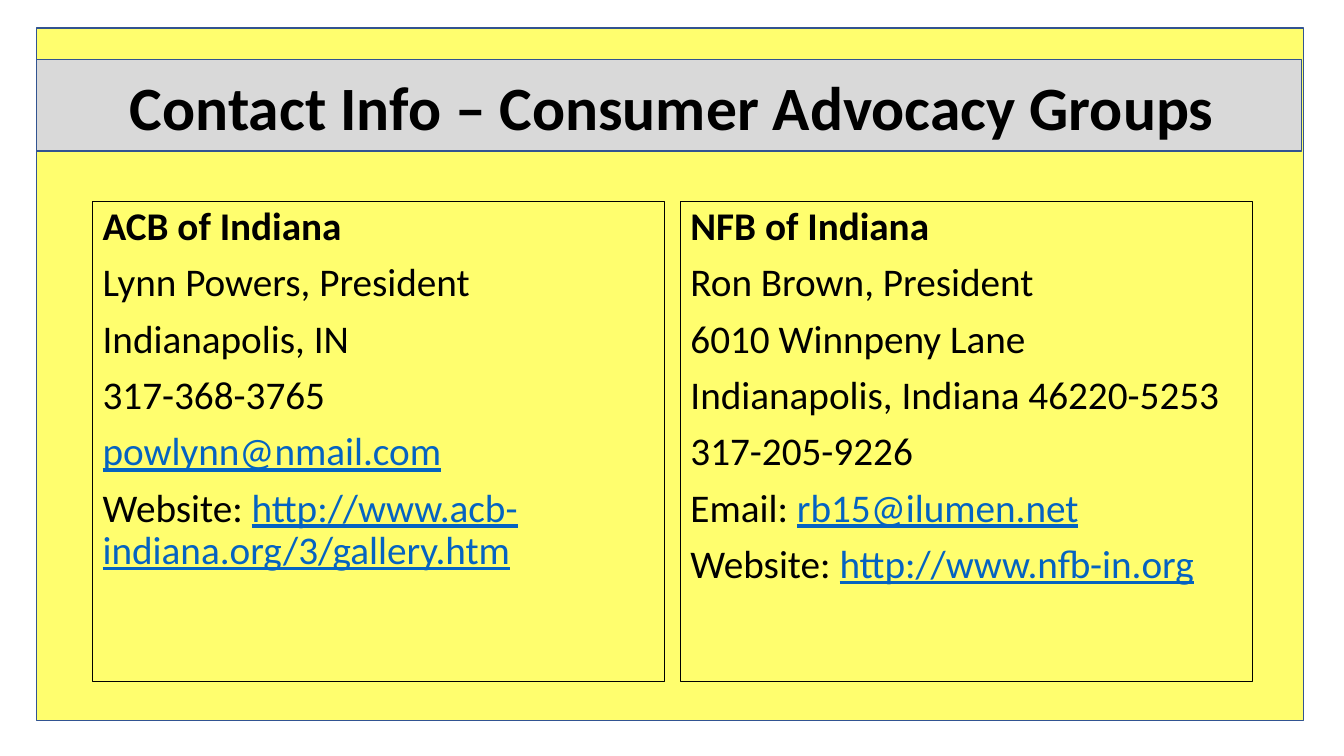
from pptx import Presentation
from pptx.dml.color import RGBColor
from pptx.enum.shapes import MSO_SHAPE as Shape
from pptx.enum.text import MSO_ANCHOR as Anchor, PP_ALIGN as Align
from pptx.util import Inches, Pt

YELLOW = RGBColor(0xFF, 0xFE, 0x6E)
GREY = RGBColor(0xD9, 0xD9, 0xD9)
BLUE = RGBColor(0x32, 0x54, 0x91)
LINK = RGBColor(0x05, 0x63, 0xC1)
BLACK = RGBColor(0, 0, 0)

# Each line is a plain part followed by a link part
CONTACTS = [
    ("ACB of Indiana", [
        ("Lynn Powers, President", ""),
        ("Indianapolis, IN", ""),
        ("317-368-3765", ""),
        ("", "powlynn@nmail.com"),
        ("Website: ", "http://www.acb-indiana.org/3/gallery.htm"),
    ]),
    ("NFB of Indiana", [
        ("Ron Brown, President", ""),
        ("6010 Winnpeny Lane", ""),
        ("Indianapolis, Indiana 46220-5253", ""),
        ("317-205-9226", ""),
        ("Email: ", "rb15@ilumen.net"),
        ("Website: ", "http://www.nfb-in.org"),
    ]),
]


def add_span(para, text, size, color=BLACK, bold=False):
    span = para.add_run()
    span.text = text
    span.font.name = "Calibri"
    span.font.size = Pt(size)
    span.font.bold = bold
    span.font.color.rgb = color
    span.font.underline = color == LINK


deck = Presentation()
deck.slide_width, deck.slide_height = Inches(13.33), Inches(7.5)
page = deck.slides.add_slide(deck.slide_layouts[5])

# Yellow panel and grey title band
for top, width, height, color in [(0.28, 12.57, 6.87, YELLOW),
                                  (0.59, 12.55, 0.91, GREY)]:
    panel = page.shapes.add_shape(Shape.RECTANGLE, Inches(0.36), Inches(top),
                                  Inches(width), Inches(height))
    panel.shadow.inherit = False
    panel.fill.solid()
    panel.fill.fore_color.rgb = color
    panel.line.color.rgb = BLUE
    panel.line.width = Pt(1)

# Title, brought in front of the band
title = page.shapes.title
title.left, title.top = Inches(0.92), Inches(0.37)
title.width, title.height = Inches(11.5), Inches(1.45)
title.element.getparent().append(title.element)
title.text_frame.vertical_anchor = Anchor.MIDDLE
para = title.text_frame.paragraphs[0]
para.alignment = Align.CENTER
para.line_spacing = 0.9
add_span(para, "Contact Info – Consumer Advocacy Groups", 44, bold=True)

# Contact boxes side by side
for column, (group, lines) in enumerate(CONTACTS):
    box = page.shapes.add_textbox(Inches(0.92 + column * 5.83), Inches(2),
                                  Inches(5.67), Inches(4.76))
    box.line.color.rgb = BLACK
    box.line.width = Pt(0.75)
    frame = box.text_frame
    frame.word_wrap = True
    para = frame.paragraphs[0]
    para.line_spacing = 0.9
    add_span(para, group, 28, bold=True)
    for plain, link in lines:
        para = frame.add_paragraph()
        para.line_spacing = 0.9
        para.space_before = Pt(10)
        if plain:
            add_span(para, plain, 28)
        if link:
            add_span(para, link, 28, LINK)

deck.save("out.pptx")
